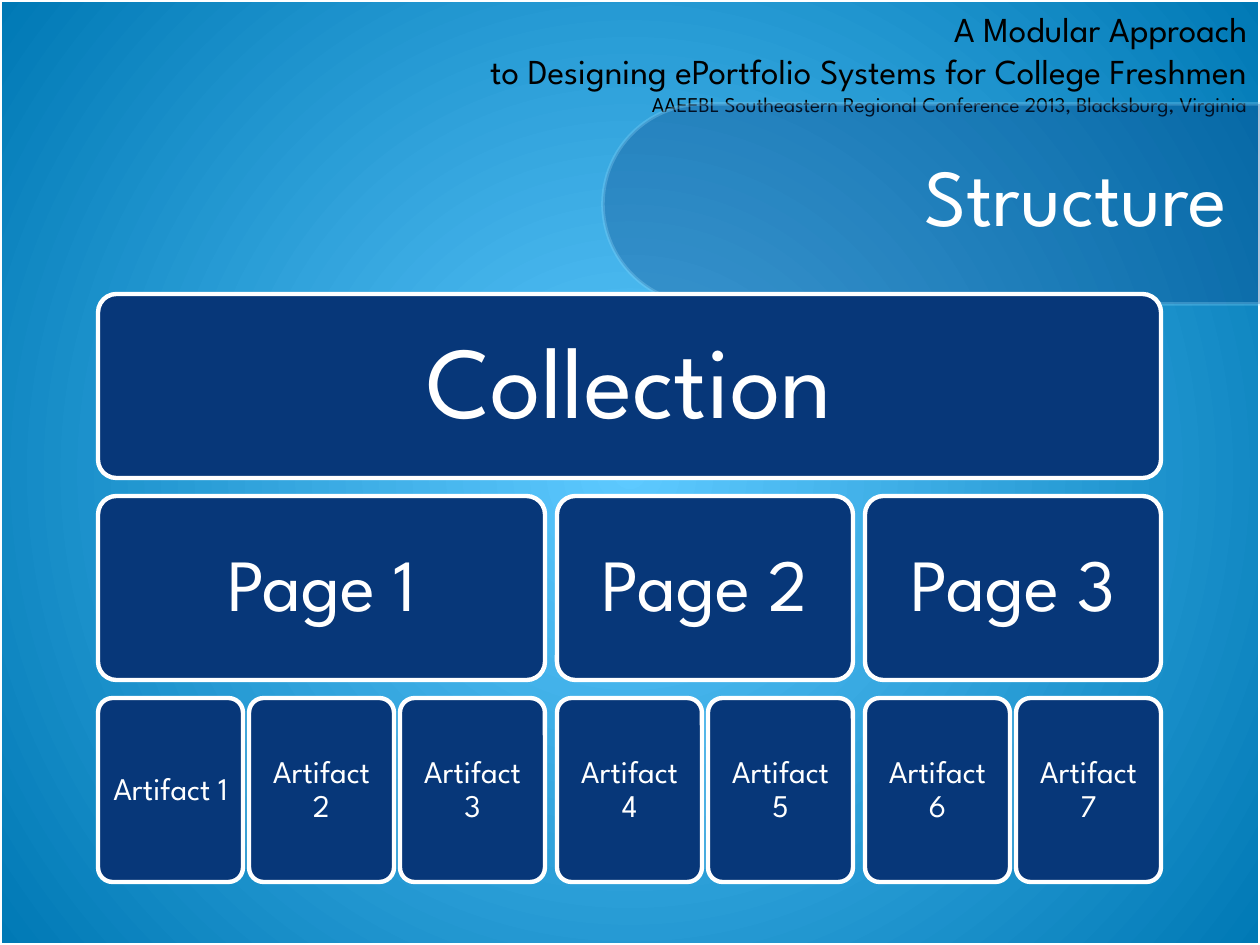
from dataclasses import dataclass

import lxml.etree
import pptx
import pptx.dml.color
import pptx.enum.shapes
import pptx.enum.text
import pptx.oxml
import pptx.oxml.ns
import pptx.util

EMU_PER_PX = 914400 / 126
SLIDE_WIDTH, SLIDE_HEIGHT = 1260, 945
FONT = "League Spartan"
NAVY, WHITE, BLACK = "073779", "FFFFFF", "000000"
PALE_BLUE = "8FD9FB"
SKY_STOPS = ("5DC9FF", "0079B5")

LEFT, TOP = 98, 294
BLOCK_HEIGHT, ROW_STEP = 184, 202
ARTIFACT_WIDTH, ARTIFACT_GAP = 145, 6
PAGE_GAP = 12
ARTIFACTS_PER_PAGE = (3, 2, 2)

SHAPE = pptx.enum.shapes.MSO_SHAPE
ALIGN = pptx.enum.text.PP_ALIGN
ANCHOR = pptx.enum.text.MSO_ANCHOR


@dataclass(frozen=True)
class Level:
    row: int
    text_size: int
    inset: int


COLLECTION = Level(row=0, text_size=58, inset=30)
PAGE = Level(row=1, text_size=42, inset=21)
ARTIFACT = Level(row=2, text_size=18, inset=9)


def px(length: float) -> pptx.util.Emu:
    return pptx.util.Emu(round(length * EMU_PER_PX))


def colour(value: str) -> pptx.dml.color.RGBColor:
    return pptx.dml.color.RGBColor.from_string(value)


def write(frame, text: str, *, size: float, color: str = WHITE,
          align=ALIGN.CENTER, line_spacing: float = 1.0) -> None:
    """Append text to the first paragraph; a newline becomes a line break."""
    para = frame.paragraphs[0]
    para.alignment = align
    para.line_spacing = line_spacing
    for index, line in enumerate(text.split("\n")):
        if index:
            para.add_line_break()
        span = para.add_run()
        span.text = line
        span.font.name = FONT
        span.font.size = pptx.util.Pt(size)
        span.font.color.rgb = colour(color)


def add_box(page, kind, left: int, top: int, width: int, height: int, *,
            fill: str | None, line: str, line_width: float):
    box = page.shapes.add_shape(kind, px(left), px(top), px(width), px(height))
    box.shadow.inherit = False
    if fill is None:
        box.fill.background()
    else:
        box.fill.solid()
        box.fill.fore_color.rgb = colour(fill)
    box.line.color.rgb = colour(line)
    box.line.width = pptx.util.Pt(line_width)
    return box


def set_opacity(box, percent: int) -> None:
    """Apply one opacity to both the fill and the line."""
    for element in box.element.spPr.iter(pptx.oxml.ns.qn("a:srgbClr")):
        alpha = lxml.etree.SubElement(element, pptx.oxml.ns.qn("a:alpha"))
        alpha.set("val", str(percent * 1000))


def paint_background(page) -> None:
    fill = page.background.fill
    fill.gradient()
    for stop, value, position in zip(fill.gradient_stops, SKY_STOPS, (0, 1)):
        stop.color.rgb = colour(value)
        stop.position = position
    linear = next(page.element.iter(pptx.oxml.ns.qn("a:lin")))
    radial = pptx.oxml.parse_xml(
        f'<a:path {pptx.oxml.ns.nsdecls("a")} path="circle">'
        '<a:fillToRect l="50000" t="50000" r="50000" b="50000"/></a:path>')
    linear.getparent().replace(linear, radial)


def add_header(page) -> None:
    header = page.shapes.add_textbox(px(98), px(1), px(1162), px(123))
    frame = header.text_frame
    frame.word_wrap = True
    write(frame, "A Modular Approach\n"
          "to Designing ePortfolio Systems for College Freshmen\n",
          size=20, color=BLACK, align=ALIGN.RIGHT)
    write(frame, "AAEEBL Southeastern Regional Conference 2013, Blacksburg, Virginia",
          size=12, color=BLACK, align=ALIGN.RIGHT)


def add_title(page) -> None:
    panel = add_box(page, SHAPE.ROUND_2_SAME_RECTANGLE, 832, -125, 200, 658,
                    fill=NAVY, line=PALE_BLUE, line_width=2)
    panel.adjustments[0] = 0.5
    panel.adjustments[1] = 0
    panel.rotation = 270
    set_opacity(panel, 30)

    title = page.shapes.title
    title.left, title.top = px(315), px(126)
    title.width, title.height = px(924), px(136)
    frame = title.text_frame
    frame.auto_size = pptx.enum.text.MSO_AUTO_SIZE.NONE
    frame.vertical_anchor = ANCHOR.MIDDLE
    write(frame, "Structure", size=46, align=ALIGN.RIGHT)
    title.element.getparent().append(title.element)  # in front of the panel


def add_block(page, level: Level, text: str, left: int, width: int) -> None:
    block = add_box(page, SHAPE.ROUNDED_RECTANGLE, left,
                    TOP + level.row * ROW_STEP, width, BLOCK_HEIGHT,
                    fill=NAVY, line=WHITE, line_width=2.5)
    block.adjustments[0] = 0.1
    frame = block.text_frame
    frame.word_wrap = True
    frame.vertical_anchor = ANCHOR.MIDDLE
    frame.margin_left = frame.margin_right = px(level.inset)
    frame.margin_top = frame.margin_bottom = px(level.inset)
    write(frame, text, size=level.text_size, line_spacing=0.9)


def span_width(artifacts: int) -> int:
    return artifacts * (ARTIFACT_WIDTH + ARTIFACT_GAP) - ARTIFACT_GAP


def add_hierarchy(page) -> None:
    page_widths = [span_width(count) for count in ARTIFACTS_PER_PAGE]
    total = sum(page_widths) + PAGE_GAP * (len(page_widths) - 1)
    add_block(page, COLLECTION, "Collection", LEFT, total)

    left, artifact = LEFT, 1
    for number, count in enumerate(ARTIFACTS_PER_PAGE, start=1):
        width = span_width(count)
        add_block(page, PAGE, f"Page {number}", left, width)
        for column in range(count):
            add_block(page, ARTIFACT, f"Artifact {artifact}",
                      left + column * (ARTIFACT_WIDTH + ARTIFACT_GAP),
                      ARTIFACT_WIDTH)
            artifact += 1
        left += width + PAGE_GAP


def main() -> None:
    deck = pptx.Presentation()
    deck.slide_width, deck.slide_height = px(SLIDE_WIDTH), px(SLIDE_HEIGHT)
    page = deck.slides.add_slide(deck.slide_layouts.get_by_name("Title Only"))
    paint_background(page)
    add_box(page, SHAPE.RECTANGLE, 0, 0, SLIDE_WIDTH, SLIDE_HEIGHT,
            fill=None, line=WHITE, line_width=2)
    add_header(page)
    add_title(page)
    add_hierarchy(page)
    deck.save("out.pptx")


if __name__ == "__main__":
    main()
